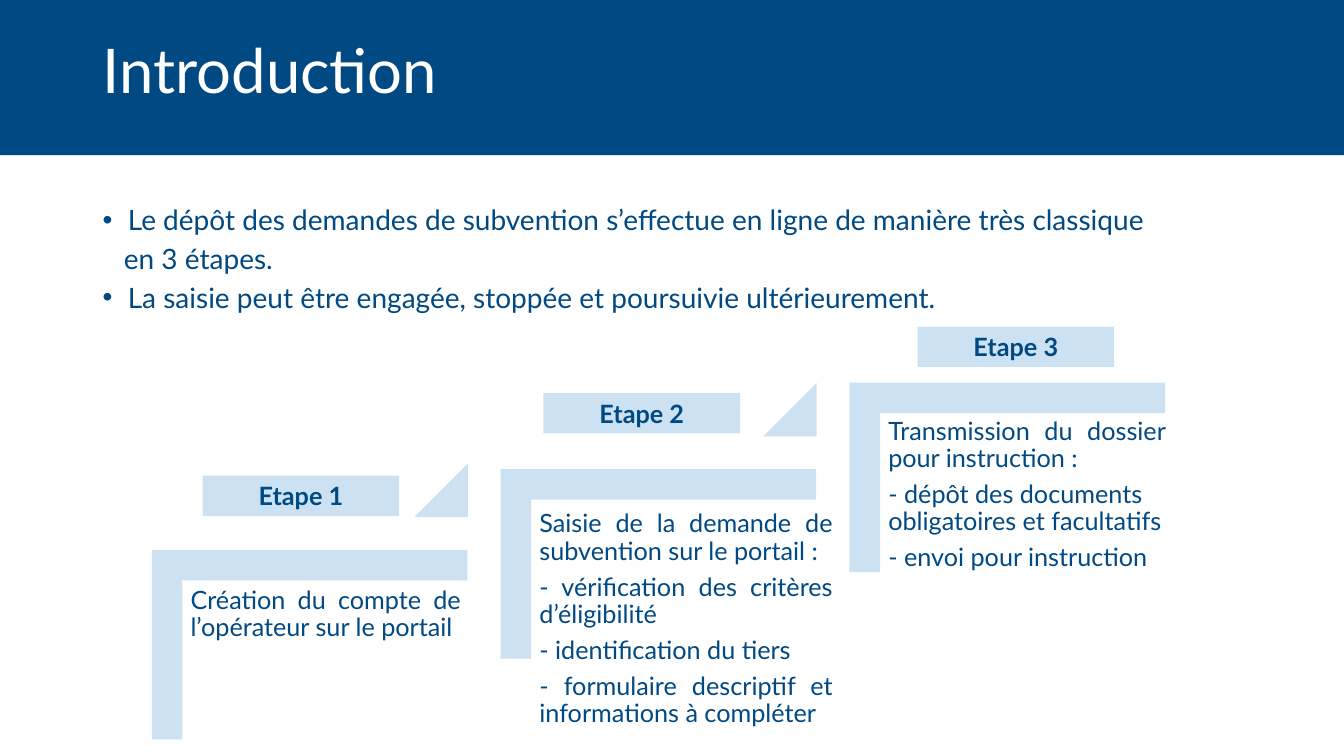
from lxml import etree
from pptx import Presentation
from pptx.dml.color import RGBColor
from pptx.enum.shapes import MSO_SHAPE
from pptx.enum.text import MSO_ANCHOR, MSO_AUTO_SIZE, PP_ALIGN
from pptx.oxml.ns import qn
from pptx.util import Inches, Pt

NAVY = RGBColor(0x00, 0x49, 0x82)
BLUE = RGBColor(0x00, 0x70, 0xC0)
WHITE = RGBColor(0xFF, 0xFF, 0xFF)


def add_filled(kind, left, top, width, height, color, alpha=None):
    """Add a borderless preset shape, with an optional opacity in percent."""
    shape = slide.shapes.add_shape(
        kind, Inches(left), Inches(top), Inches(width), Inches(height))
    shape.shadow.inherit = False
    shape.line.fill.background()
    shape.fill.solid()
    shape.fill.fore_color.rgb = color
    if alpha is not None:
        color_element = shape._element.spPr.find(".//" + qn("a:srgbClr"))
        etree.SubElement(color_element, qn("a:alpha"), val=str(alpha * 1000))
    return shape


def style(paragraph, size, color=NAVY, align=PP_ALIGN.JUSTIFY, spacing=0.9, bold=False):
    paragraph.alignment = align
    paragraph.line_spacing = spacing
    paragraph.font.name = "Lato"
    paragraph.font.size = Pt(size)
    paragraph.font.bold = bold
    paragraph.font.color.rgb = color


presentation = Presentation()
presentation.slide_width = Inches(13.33)
presentation.slide_height = Inches(7.5)
slide = presentation.slides.add_slide(presentation.slide_layouts[5])

# Header band, behind the title
band = add_filled(MSO_SHAPE.RECTANGLE, 0, 0, 13.33, 1.54, NAVY)
slide.shapes._spTree.insert(2, band._element)

title = slide.shapes.title
title.left, title.top = Inches(0.92), Inches(0)
title.width, title.height = Inches(11.5), Inches(1.45)
title.text_frame.text = "Introduction"
title.text_frame.vertical_anchor = MSO_ANCHOR.MIDDLE
title.text_frame.auto_size = MSO_AUTO_SIZE.NONE
style(title.text_frame.paragraphs[0], 44, WHITE, PP_ALIGN.LEFT)

# Introductory text: (text, has bullet)
intro_lines = [
    ("Le dépôt des demandes de subvention s’effectue en ligne de manière très classique", True),
    ("en 3 étapes.", False),
    ("La saisie peut être engagée, stoppée et poursuivie ultérieurement.", True),
]
intro = slide.shapes.add_textbox(Inches(0.92), Inches(2), Inches(11.5), Inches(4.76))
frame = intro.text_frame
frame.word_wrap = True
for index, (text, has_bullet) in enumerate(intro_lines):
    paragraph = frame.paragraphs[0] if index == 0 else frame.add_paragraph()
    paragraph.text = text
    properties = paragraph._p.get_or_add_pPr()
    if has_bullet:
        properties.set("marL", str(Inches(0.25)))
        properties.set("indent", str(-Inches(0.25)))
        etree.SubElement(properties, qn("a:buFont"), typeface="Arial")
        etree.SubElement(properties, qn("a:buChar"), char="•")
    else:
        properties.set("marL", str(Inches(0.21)))
    style(paragraph, 20)
    if index > 0:
        paragraph.space_before = Pt(6)

# Staircase: corner top, text (top, width, height), label (left, top), lines
steps = [
    (4.83, (5.76, 2.82, 2.48), (2.01, 4.72),
     ["Création du compte de l’opérateur sur le portail"]),
    (4.03, (5.0, 3.05, 2.36), (5.39, 3.9),
     ["Saisie de la demande de subvention sur le portail :",
      "- vérification des critères d’éligibilité",
      "- identification du tiers",
      "- formulaire descriptif et informations à compléter"]),
    (3.17, (4.08, 2.89, 2.48), (9.1, 3.24),
     ["Transmission du dossier pour instruction :",
      "- dépôt des documents obligatoires et facultatifs",
      "- envoi pour instruction"]),
]
STEP_PITCH = 3.46
for number, (corner_top, text_place, label_place, lines) in enumerate(steps, start=1):
    offset = (number - 1) * STEP_PITCH

    # Corner bracket
    corner = add_filled(MSO_SHAPE.CORNER, 2.13 + offset, corner_top, 1.88, 3.13, BLUE, 20)
    corner.rotation = 90
    corner.adjustments[0] = corner.adjustments[1] = 0.161

    # Description
    text_top, text_width, text_height = text_place
    box = slide.shapes.add_textbox(Inches(1.82 + offset), Inches(text_top),
                                   Inches(text_width), Inches(text_height))
    frame = box.text_frame
    frame.word_wrap = True
    frame.margin_left = frame.margin_right = Inches(0.07)
    frame.margin_top = frame.margin_bottom = Inches(0.07)
    for index, line in enumerate(lines):
        paragraph = frame.paragraphs[0] if index == 0 else frame.add_paragraph()
        paragraph.text = line
        left_aligned = line.startswith("- dépôt")
        style(paragraph, 18, align=PP_ALIGN.LEFT if left_aligned else PP_ALIGN.JUSTIFY)
        paragraph.space_after = Pt(6.3)

    # Triangle leading up to the next step
    if number < len(steps):
        triangle = add_filled(MSO_SHAPE.ISOSCELES_TRIANGLE, 4.11 + offset,
                              corner_top - 0.23, 0.53, 0.53, BLUE, 20)
        triangle.adjustments[0] = 1

    # Step label
    label = add_filled(MSO_SHAPE.RECTANGLE, *label_place, 1.95, 0.4, BLUE, 20)
    label.text_frame.text = f"Etape {number}"
    label.text_frame.word_wrap = True
    label.text_frame.vertical_anchor = MSO_ANCHOR.MIDDLE
    style(label.text_frame.paragraphs[0], 18, align=PP_ALIGN.CENTER, spacing=1.0, bold=True)

presentation.save("out.pptx")
